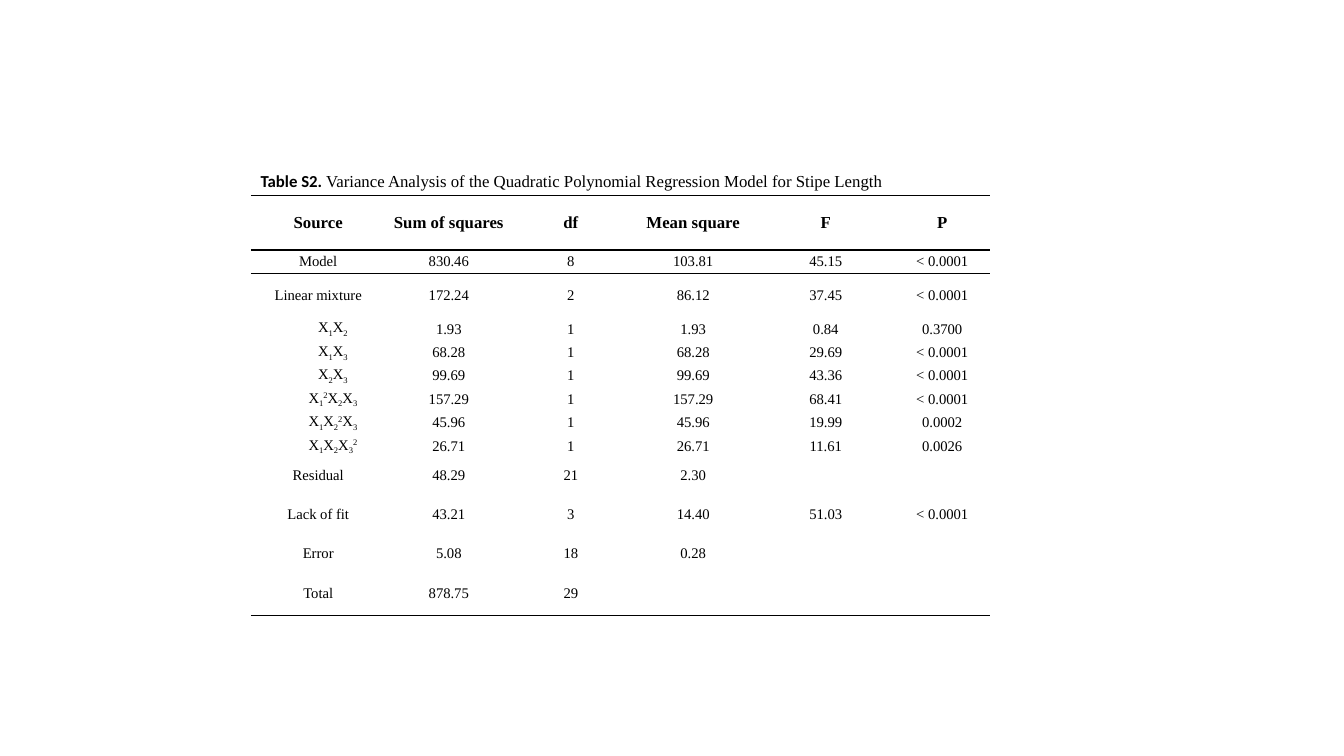
from lxml.etree import SubElement
from pptx import Presentation
from pptx.dml.color import RGBColor
from pptx.enum.text import MSO_ANCHOR, PP_ALIGN
from pptx.oxml.ns import qn
from pptx.util import Cm, Pt

BLACK = RGBColor(0x00, 0x00, 0x00)
SERIF = "Times New Roman"
LABEL_FONT = {"name": "Calibri", "size": Pt(12), "bold": True}
CAPTION_FONT = {"name": SERIF, "size": Pt(12), "bold": False}
HEADER_FONT = {"name": SERIF, "size": Pt(12), "bold": True}
BODY_FONT = {"name": SERIF, "size": Pt(10.5), "bold": False}
CELL_FORMAT = {
    "margin_left": Cm(0.03), "margin_right": Cm(0.03),
    "margin_top": Cm(0.03), "margin_bottom": Cm(0.03),
    "vertical_anchor": MSO_ANCHOR.MIDDLE,
}
NO_GRID_STYLE = "{2D5ABB26-0587-4C30-8999-92F81FD0307C}"
BASELINES = {"_": "-25000", "^": "30000"}
TERM_INDENT = Cm(0.74)

COLUMN_WIDTHS = [3.4, 3.18, 2.97, 3.2, 3.48, 2.39]
ROW_HEIGHTS = [1.37, 0.59, 1.11] + [0.59] * 6 + [0.88, 1.1, 0.88, 1.11]
ROWS = [
    ["Source", "Sum of squares", "df", "Mean square", "F", "P"],
    ["Model", "830.46", "8", "103.81", "45.15", "< 0.0001"],
    ["Linear mixture", "172.24", "2", "86.12", "37.45", "< 0.0001"],
    ["X_1X_2", "1.93", "1", "1.93", "0.84", "0.3700"],
    ["X_1X_3", "68.28", "1", "68.28", "29.69", "< 0.0001"],
    ["X_2X_3", "99.69", "1", "99.69", "43.36", "< 0.0001"],
    ["X_1^2X_2X_3", "157.29", "1", "157.29", "68.41", "< 0.0001"],
    ["X_1X_2^2X_3", "45.96", "1", "45.96", "19.99", "0.0002"],
    ["X_1X_2X_3^2", "26.71", "1", "26.71", "11.61", "0.0026"],
    ["Residual", "48.29", "21", "2.30", "", ""],
    ["Lack of fit", "43.21", "3", "14.40", "51.03", "< 0.0001"],
    ["Error", "5.08", "18", "0.28", "", ""],
    ["Total", "878.75", "29", "", "", ""],
]


def apply_format(target, values):
    for name, value in values.items():
        setattr(target, name, value)


def add_run(p, text, font):
    r = p.add_run()
    r.text = text
    apply_format(r.font, font)
    r.font.color.rgb = BLACK
    return r


def add_term(p, term, font):
    """Write a model term in which _ lowers and ^ raises the next character."""
    mark = None
    for char in term:
        if char in BASELINES:
            mark = char
            continue
        r = add_run(p, char, font)
        if mark:
            r.font._element.set("baseline", BASELINES[mark])
        mark = None


def add_rule(cell, side):
    """Draw a black border on the top (T) or bottom (B) of a cell."""
    ln = SubElement(cell._tc.get_or_add_tcPr(), qn(f"a:ln{side}"), w=str(Pt(1)))
    fill = SubElement(ln, qn("a:solidFill"))
    SubElement(fill, qn("a:srgbClr"), val=str(BLACK))


def add_caption(s, left, top, width, height):
    tf = s.shapes.add_textbox(left, top, width, height).text_frame
    tf.word_wrap = True
    p = tf.paragraphs[0]
    p.alignment = PP_ALIGN.JUSTIFY
    add_run(p, "Table S2. ", LABEL_FONT)
    add_run(p, "Variance Analysis of the Quadratic Polynomial Regression "
               "Model for Stipe Length", CAPTION_FONT)


def fill_cell(cell, text, font):
    apply_format(cell, CELL_FORMAT)
    p = cell.text_frame.paragraphs[0]
    p.alignment = PP_ALIGN.CENTER
    if "_" in text:
        p._p.get_or_add_pPr().set("indent", str(TERM_INDENT))
        add_term(p, text, font)
    elif text:
        add_run(p, text, font)


def add_variance_table(s, left, top, width, height):
    table = s.shapes.add_table(len(ROWS), len(COLUMN_WIDTHS),
                               left, top, width, height).table
    table._tbl.tblPr.find(qn("a:tableStyleId")).text = NO_GRID_STYLE
    apply_format(table, {"first_row": False, "horz_banding": False})
    for column, size in zip(table.columns, COLUMN_WIDTHS):
        column.width = Cm(size)
    for row, size in zip(table.rows, ROW_HEIGHTS):
        row.height = Cm(size)
    for i, values in enumerate(ROWS):
        for j, text in enumerate(values):
            cell = table.cell(i, j)
            fill_cell(cell, text, BODY_FONT if i else HEADER_FONT)
            if i < 2:
                add_rule(cell, "T")
            if i in (0, len(ROWS) - 1):
                add_rule(cell, "B")
            cell.fill.background()


def main():
    prs = Presentation()
    prs.slide_width, prs.slide_height = Cm(33.87), Cm(19.05)
    s = prs.slides.add_slide(prs.slide_layouts[6])
    left, top, caption_height = Cm(6.32), Cm(4.17), Cm(0.76)
    add_caption(s, left, top, Cm(22.81), caption_height)
    add_variance_table(s, left, top + caption_height,
                       Cm(sum(COLUMN_WIDTHS)), Cm(sum(ROW_HEIGHTS)))
    prs.save("out.pptx")


if __name__ == "__main__":
    main()
